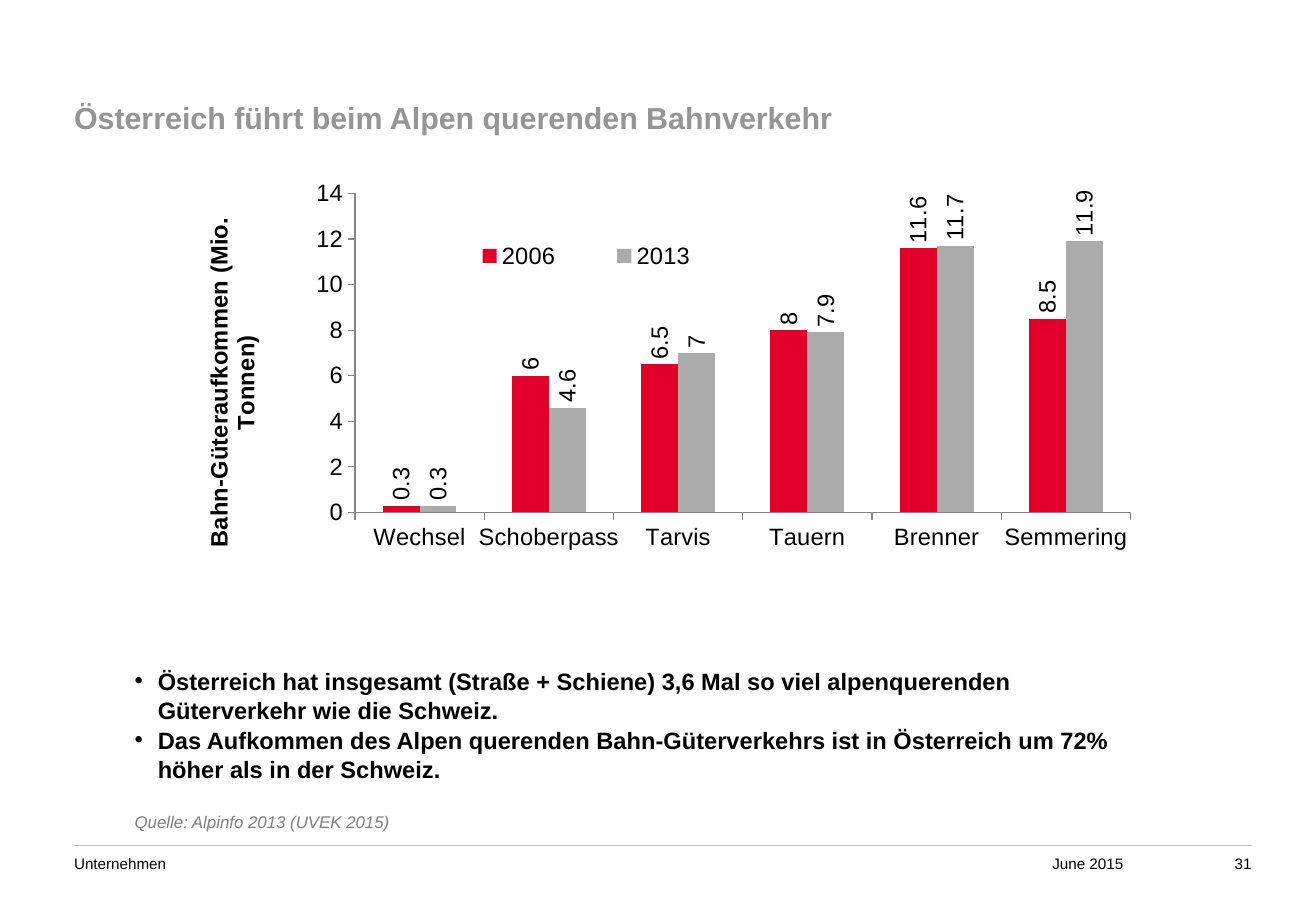
"""Build the slide on rail freight across the Austrian Alps."""
from lxml import etree
from pptx import Presentation
from pptx.chart.data import CategoryChartData
from pptx.dml.color import RGBColor
from pptx.enum.chart import XL_CHART_TYPE, XL_LABEL_POSITION, XL_LEGEND_POSITION, XL_TICK_MARK
from pptx.enum.shapes import MSO_CONNECTOR
from pptx.enum.text import MSO_ANCHOR, PP_ALIGN
from pptx.oxml.ns import qn
from pptx.util import Inches, Pt

COLUMN = XL_CHART_TYPE.COLUMN_CLUSTERED
OUT_END = XL_LABEL_POSITION.OUTSIDE_END
LEGEND = XL_LEGEND_POSITION.RIGHT
OUT, NONE = XL_TICK_MARK.OUTSIDE, XL_TICK_MARK.NONE
TOP, MID, BASE = MSO_ANCHOR.TOP, MSO_ANCHOR.MIDDLE, MSO_ANCHOR.BOTTOM
LEFT, RIGHT = PP_ALIGN.LEFT, PP_ALIGN.RIGHT

FONT = "Arial"
BLACK, GREY, AXIS, RULE = "000000", "7F7F7F", "868686", "C1C1C1"
TITLE = "Österreich führt beim Alpen querenden Bahnverkehr"
FOOT = [
    ("Unternehmen", 0.61, 4.53, LEFT),
    ("June 2015", 8.66, 0.95, LEFT),
    ("31", 9.87, 0.43, RIGHT),
]
POINTS = [
    "Österreich hat insgesamt (Straße + Schiene) 3,6 Mal so viel alpenquerenden "
    "Güterverkehr wie die Schweiz.",
    "Das Aufkommen des Alpen querenden Bahn-Güterverkehrs ist in Österreich um 72% "
    "höher als in der Schweiz.",
]
SOURCE = "Quelle: Alpinfo 2013 (UVEK 2015)"
UNIT = "Bahn-Güteraufkommen (Mio. Tonnen)"
ROUTES = ["Wechsel", "Schoberpass", "Tarvis", "Tauern", "Brenner", "Semmering"]
YEARS = [
    ("2006", [0.3, 6, 6.5, 8, 11.6, 8.5], "E2002A"),
    ("2013", [0.3, 4.6, 7, 7.9, 11.7, 11.9], "ABABAB"),
]


def color(code):
    return RGBColor.from_string(code)


def style(font, size, code=BLACK, bold=False, italic=False):
    font.name, font.size = FONT, Pt(size)
    font.bold, font.italic = bold, italic
    font.color.rgb = color(code)


def add_frame(slide, box, anchor=TOP, inset=(0, 0)):
    frame = slide.shapes.add_textbox(*map(Inches, box)).text_frame
    frame.word_wrap = True
    frame.vertical_anchor = anchor
    frame.margin_left = frame.margin_right = Inches(inset[0])
    frame.margin_top = frame.margin_bottom = Inches(inset[1])
    return frame


def add_bullet(para):
    props = para._p.get_or_add_pPr()
    indent = Inches(0.19)
    props.set("marL", str(indent))
    props.set("indent", str(-indent))
    etree.SubElement(props, qn("a:buFont")).set("typeface", FONT)
    etree.SubElement(props, qn("a:buChar")).set("char", "•")


def place(part, index, inner=False, **spots):
    for old in part.findall(qn("c:layout")):
        part.remove(old)
    layout = etree.Element(qn("c:layout"))
    manual = etree.SubElement(layout, qn("c:manualLayout"))
    if inner:
        etree.SubElement(manual, qn("c:layoutTarget")).set("val", "inner")
    for key in "xy":
        etree.SubElement(manual, qn(f"c:{key}Mode")).set("val", "edge")
    for key, spot in spots.items():
        etree.SubElement(manual, qn(f"c:{key}")).set("val", str(spot))
    part.insert(index, layout)


def turn(body):
    body.set("rot", "-5400000")
    body.set("vert", "horz")


def add_chart(slide):
    data = CategoryChartData()
    data.categories = ROUTES
    for name, vals, _ in YEARS:
        data.add_series(name, vals)
    box = map(Inches, (1.56, 1.47, 7.87, 4.11))
    chart = slide.shapes.add_chart(COLUMN, *box, data).chart
    style(chart.font, 14)
    chart.has_title = False

    plot = chart.plots[0]
    plot.gap_width, plot.overlap = 150, 0
    plot.vary_by_categories = False
    for series, (_, _, code) in zip(plot.series, YEARS):
        series.format.fill.solid()
        series.format.fill.fore_color.rgb = color(code)
        series.invert_if_negative = False
    plot.has_data_labels = True
    labels = plot.data_labels
    labels.show_value, labels.position = True, OUT_END
    style(labels.font, 14)
    turn(labels._element.find(qn("c:txPr")).find(qn("a:bodyPr")))

    for axis in (chart.category_axis, chart.value_axis):
        axis.has_major_gridlines = False
        axis.major_tick_mark, axis.minor_tick_mark = OUT, NONE
        axis.format.line.color.rgb = color(AXIS)
        axis.format.line.width = Pt(0.75)
        style(axis.tick_labels.font, 14)
    axis = chart.value_axis
    axis.minimum_scale, axis.maximum_scale, axis.major_unit = 0, 14, 2
    title = axis.axis_title
    title.text_frame.text = UNIT
    style(title.text_frame.paragraphs[0].font, 14, bold=True)
    turn(title.text_frame._txBody.bodyPr)
    place(title._element, 1, x=0.01, y=0.07)

    chart.has_legend = True
    legend = chart.legend
    legend.position, legend.include_in_layout = LEGEND, False
    style(legend.font, 14)
    place(legend._element, 1, x=0.25, y=0.11, w=0.33, h=0.09)
    area = chart._chartSpace.chart.plotArea
    place(area, 0, inner=True, x=0.173, y=0.03, w=0.811, h=0.639)


def add_points(slide):
    frame = add_frame(slide, (1.01, 5.44, 8.58, 1.45), MID, (0.1, 0.05))
    para = frame.paragraphs[0]
    for point in POINTS:
        add_bullet(para)
        para.text = point
        para.line_spacing = 1.04
        style(para.font, 14, bold=True)
        para = frame.add_paragraph()
    para.text = SOURCE
    para.space_before = Pt(17)
    style(para.font, 10, GREY, italic=True)


def main():
    deck = Presentation()
    deck.slide_width, deck.slide_height = Inches(10.83), Inches(7.5)
    slide = deck.slides.add_slide(deck.slide_layouts[6])

    rule = slide.shapes.add_connector(
        MSO_CONNECTOR.STRAIGHT, *map(Inches, (0.61, 6.96, 10.3, 6.96)))
    rule.line.color.rgb, rule.line.width = color(RULE), Pt(1)
    etree.SubElement(rule._element.spPr, qn("a:effectLst"))

    head = add_frame(slide, (0.61, 0.55, 6.97, 0.57), BASE).paragraphs[0]
    head.text = TITLE
    style(head.font, 18, "959595", bold=True)
    for text, left, width, align in FOOT:
        para = add_frame(slide, (left, 7.03, width, 0.29)).paragraphs[0]
        para.text, para.alignment = text, align
        style(para.font, 9)

    add_chart(slide)
    add_points(slide)
    deck.save("out.pptx")


if __name__ == "__main__":
    main()
